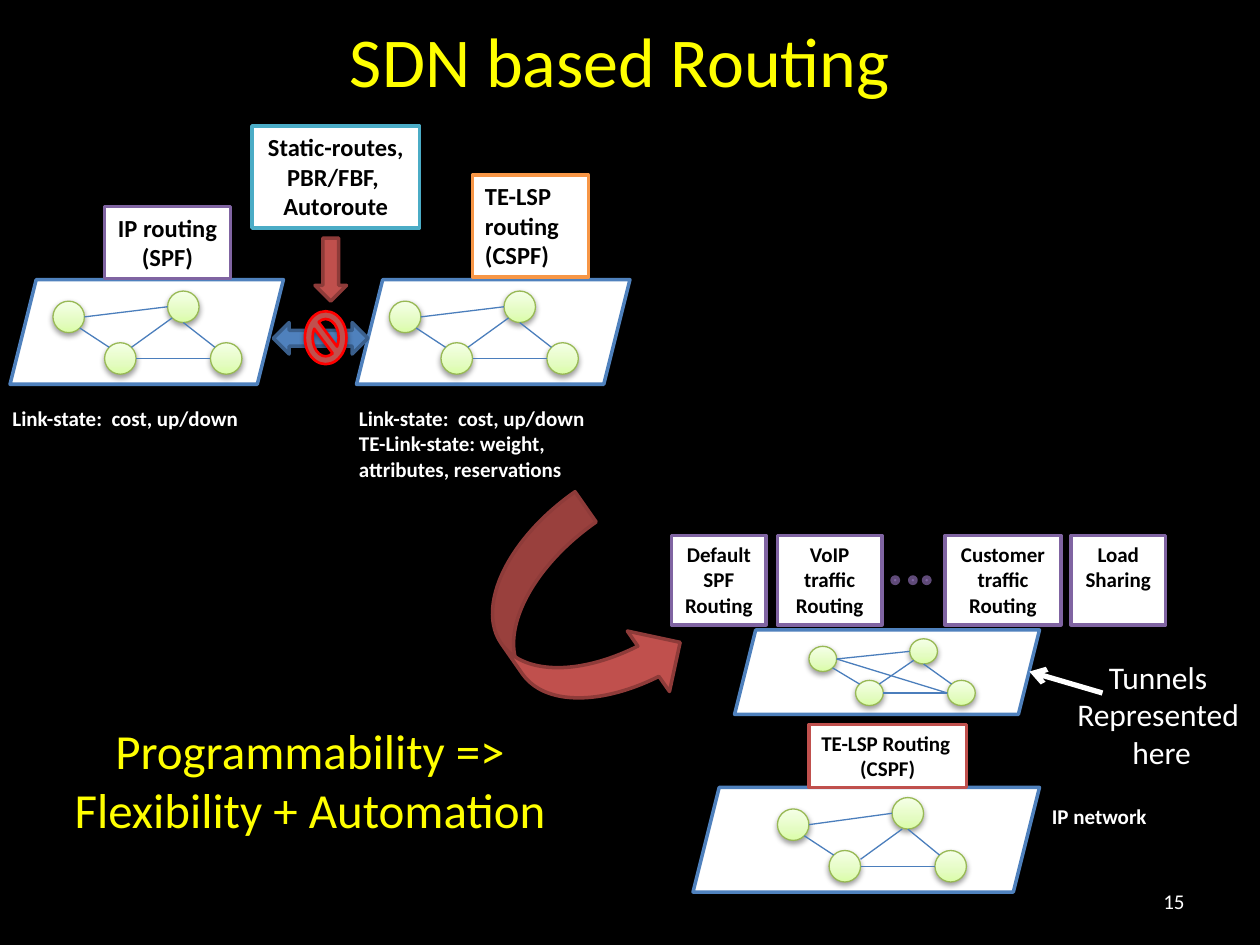
from math import cos, radians, sin

from pptx import Presentation
from pptx.dml.color import RGBColor
from pptx.enum.shapes import MSO_CONNECTOR, MSO_SHAPE as SHAPE
from pptx.enum.text import MSO_ANCHOR as ANCHOR, PP_ALIGN as ALIGN
from pptx.oxml import parse_xml
from pptx.oxml.ns import nsdecls, qn
from pptx.util import Inches, Pt

COLORS = {
    "black": "000000", "white": "FFFFFF", "yellow": "FFFF00",
    "blue": "4F81BD", "dark_blue": "3A5F8C", "link": "4B7EBC",
    "purple": "8064A2", "dark_purple": "5F4A78", "orange": "F79646",
    "aqua": "4BACC6", "brick": "C0504D", "dark_brick": "8E3B39",
    "red": "FF0000", "node_edge": "98B955",
    "node_low": "DAFDA7", "node_mid": "E4FCC2", "node_high": "F5FFE7",
}
RIGHT, LOWER_RIGHT, BOTTOM, LOWER_LEFT = 0, 45, 90, 135
LEFT, UPPER_LEFT, UPPER_RIGHT = 180, 225, 315
LINKS = [
    ("top", BOTTOM, "right", UPPER_LEFT),
    ("low", RIGHT, "right", LEFT),
    ("left", LOWER_RIGHT, "low", UPPER_LEFT),
    ("top", LEFT, "left", RIGHT),
]
DIAGONAL = ("top", LOWER_LEFT, "low", UPPER_RIGHT)
CROSS = ("right", LEFT, "left", RIGHT)


def rgb(name):
    return RGBColor.from_string(COLORS[name])


def write(sp, text, size=12, color="white", bold=False, align=ALIGN.LEFT,
          anchor=ANCHOR.TOP, wrap=True):
    tf = sp.text_frame
    tf.word_wrap = wrap
    tf.vertical_anchor = anchor
    aligns = align if isinstance(align, list) else [align]
    for i, line in enumerate(text.split("\n")):
        p = tf.paragraphs[0] if i == 0 else tf.add_paragraph()
        p.alignment = aligns[min(i, len(aligns) - 1)]
        r = p.add_run()
        r.text = line
        r.font.name = "Calibri"
        r.font.size = Pt(size)
        r.font.bold = bold
        r.font.color.rgb = rgb(color)


def add_text(s, box, text, **fmt):
    write(s.shapes.add_textbox(*map(Inches, box)), text, **fmt)


def add_shape(s, kind, box, fill, line, width=2):
    sp = s.shapes.add_shape(kind, *map(Inches, box))
    sp.shadow.inherit = False
    if fill:
        sp.fill.solid()
        sp.fill.fore_color.rgb = rgb(fill)
    sp.line.color.rgb = rgb(line)
    sp.line.width = Pt(width)
    return sp


def add_shadow(sp):
    effects = sp._element.spPr.find(qn("a:effectLst"))
    effects.append(parse_xml(
        f'<a:outerShdw {nsdecls("a")} blurRad="40000" dist="20000" dir="5400000" '
        f'rotWithShape="0"><a:srgbClr val="{COLORS["black"]}">'
        '<a:alpha val="38000"/></a:srgbClr></a:outerShdw>'))


def add_label(s, box, text, line, size=12, align=ALIGN.CENTER):
    sp = add_shape(s, SHAPE.RECTANGLE, box, "white", line)
    write(sp, text, size=size, color="black", bold=True, align=align)


def add_line(s, start, end, color="link", width=0.75, arrow=False):
    cx = s.shapes.add_connector(MSO_CONNECTOR.STRAIGHT, *map(Inches, start + end))
    cx.line.color.rgb = rgb(color)
    cx.line.width = Pt(width)
    if arrow:
        cx.line._get_or_add_ln().append(
            parse_xml(f'<a:tailEnd {nsdecls("a")} type="arrow"/>'))
    cx._element.spPr.append(parse_xml(f'<a:effectLst {nsdecls("a")}/>'))


def add_node(s, box):
    sp = add_shape(s, SHAPE.OVAL, box, None, "node_edge", 0.75)
    stops = "".join(
        f'<a:gs pos="{pos}"><a:srgbClr val="{COLORS[name]}"/></a:gs>'
        for pos, name in [(0, "node_low"), (35000, "node_mid"), (100000, "node_high")])
    sp._element.spPr.find(qn("a:prstGeom")).addnext(parse_xml(
        f'<a:gradFill {nsdecls("a")} rotWithShape="1"><a:gsLst>{stops}</a:gsLst>'
        '<a:lin ang="16200000" scaled="0"/></a:gradFill>'))
    add_shadow(sp)


def add_network(s, plane, places, links, size=(0.25, 0.25)):
    add_shape(s, SHAPE.PARALLELOGRAM, plane, "white", "blue")
    nodes = dict(zip(("left", "low", "top", "right"), places))
    for place in places:
        add_node(s, place + size)

    def edge(name, angle):
        (x, y), (w, h) = nodes[name], size
        a = radians(angle)
        return x + w / 2 * (1 + cos(a)), y + h / 2 * (1 + sin(a))

    for start, start_angle, end, end_angle in links:
        add_line(s, edge(start, start_angle), edge(end, end_angle))


def add_current_routing(s):
    places = [(0.42, 2.39), (0.83, 2.72), (1.33, 2.31), (1.67, 2.72)]
    for x, shift in [(0.08, 0), (2.83, 2.67)]:
        add_network(s, (x, 2.22, 2.17, 0.83),
                    [(px + shift, py) for px, py in places], LINKS + [DIAGONAL])
    add_label(s, (0.83, 1.64, 1, 0.57), "IP routing (SPF)", "purple", size=14)
    add_label(s, (3.75, 1.39, 0.92, 0.81), "TE-LSP routing (CSPF)", "orange",
              size=14, align=ALIGN.JUSTIFY)
    add_shape(s, SHAPE.LEFT_RIGHT_ARROW, (2.17, 2.56, 0.75, 0.25), "blue", "dark_blue")
    add_shadow(add_shape(s, SHAPE.NO_SYMBOL, (2.42, 2.47, 0.33, 0.42),
                         "brick", "red", 1.5))
    add_shape(s, SHAPE.DOWN_ARROW, (2.5, 1.89, 0.25, 0.5), "brick", "dark_brick")
    add_label(s, (2, 1, 1.33, 0.81), "Static-routes, PBR/FBF, \nAutoroute", "aqua", size=14)
    add_text(s, (2.75, 3.17, 2.08, 0.71),
             "Link-state:  cost, up/down\nTE-Link-state: weight, attributes, reservations",
             bold=True)
    add_text(s, (0, 3.17, 2.08, 0.3), "Link-state:  cost, up/down", bold=True)


def add_sdn_routing(s):
    add_network(s, (5.5, 6.25, 2.75, 0.83),
                [(6.17, 6.42), (6.58, 6.75), (7.08, 6.33), (7.42, 6.75)], LINKS)
    add_line(s, (7.16, 6.58), (6.83, 6.82))
    add_text(s, (8.25, 6.33, 1.08, 0.3), "IP network", bold=True)
    add_label(s, (6.42, 5.75, 1.25, 0.5), "TE-LSP Routing\n(CSPF)", "brick",
              align=[ALIGN.JUSTIFY, ALIGN.CENTER])
    add_network(s, (5.83, 5, 2.42, 0.67),
                [(6.42, 5.13), (6.79, 5.4), (7.22, 5.07), (7.52, 5.4)],
                LINKS + [CROSS, DIAGONAL], size=(0.22, 0.2))
    for x, w, text in [(5.33, 0.75, "Default SPF Routing"),
                       (6.17, 0.83, "VoIP traffic Routing"),
                       (7.5, 0.92, "Customer traffic Routing"),
                       (8.5, 0.75, "Load Sharing")]:
        add_label(s, (x, 4.25, w, 0.71), text, "purple")
    for x in (7.08, 7.22, 7.33):
        add_shape(s, SHAPE.OVAL, (x, 4.58, 0.05, 0.05), "purple", "dark_purple")
    add_text(s, (8.44, 5.17, 1.56, 1.01), "Tunnels \nRepresented \nhere",
             size=18, align=ALIGN.CENTER, wrap=False)
    add_line(s, (8.75, 5.5), (8.17, 5.33), "white", 3, arrow=True)


def main():
    prs = Presentation()
    prs.slide_width, prs.slide_height = Inches(10), Inches(7.5)
    s = prs.slides.add_slide(prs.slide_layouts[6])
    s.background.fill.solid()
    s.background.fill.fore_color.rgb = rgb("black")
    add_text(s, (0.42, 0.09, 9, 0.67), "SDN based Routing",
             size=40, color="yellow", align=ALIGN.CENTER)
    add_current_routing(s)
    sp = add_shape(s, SHAPE.CURVED_RIGHT_ARROW, (4, 4.08, 1.17, 1.75),
                   "brick", "dark_brick")
    sp.rotation = 325.1
    add_text(s, (0.42, 5.67, 4.08, 1.04), "Programmability =>\nFlexibility + Automation",
             size=28, color="yellow", align=ALIGN.CENTER)
    add_text(s, (7.17, 6.95, 2.33, 0.4), "15", align=ALIGN.RIGHT, anchor=ANCHOR.MIDDLE)
    add_sdn_routing(s)
    prs.save("out.pptx")


if __name__ == "__main__":
    main()
